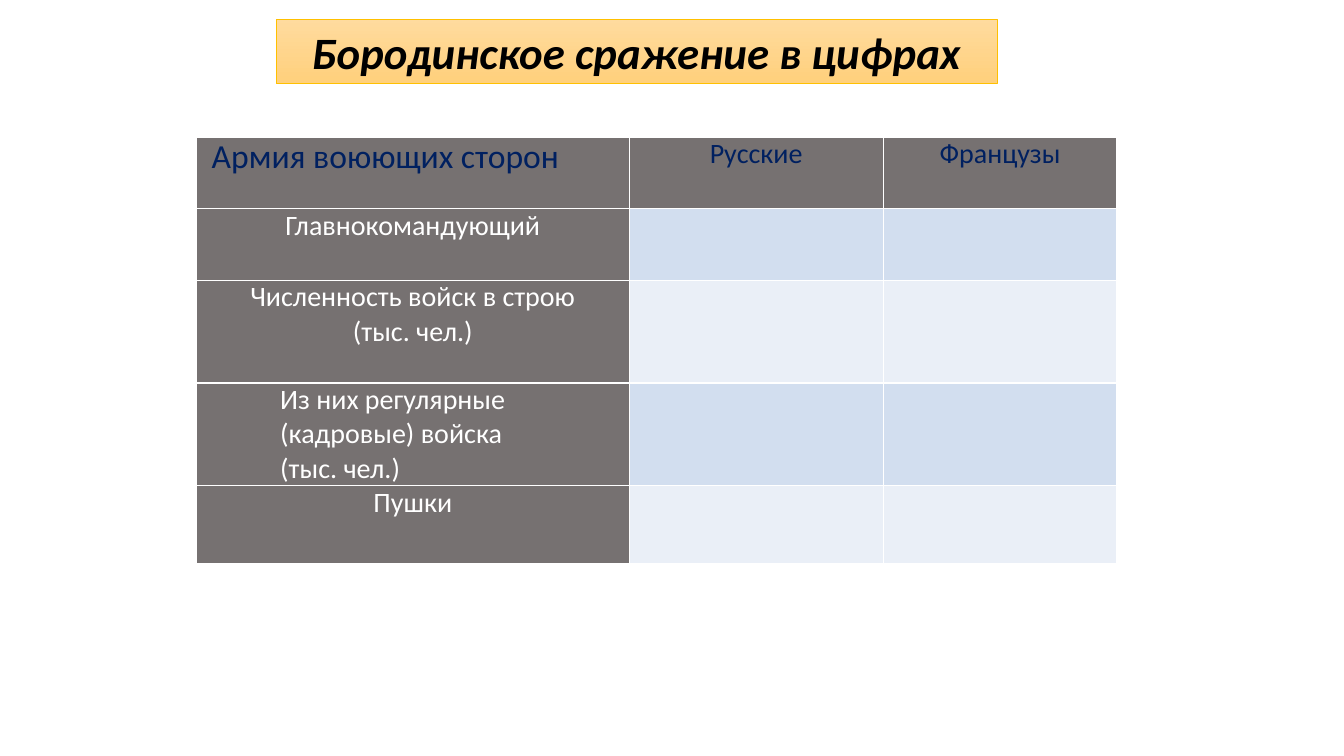
"""Builds the slide with the Battle of Borodino table."""
from lxml.etree import SubElement
from pptx import Presentation
from pptx.dml.color import RGBColor
from pptx.enum.shapes import MSO_SHAPE
from pptx.enum.text import MSO_ANCHOR, PP_ALIGN
from pptx.oxml import parse_xml
from pptx.oxml.ns import nsdecls, qn
from pptx.util import Inches, Pt

WHITE = RGBColor(255, 255, 255)
BLACK = RGBColor(0, 0, 0)
NAVY = RGBColor(0x00, 0x20, 0x60)
GREY = RGBColor(0x76, 0x71, 0x71)
GOLD = RGBColor(0xFF, 0xC0, 0x00)
PEACH = RGBColor(0xFF, 0xDB, 0x9E)
AMBER = RGBColor(0xFF, 0xD0, 0x7C)
BANDS = RGBColor(0xD2, 0xDE, 0xEF), RGBColor(0xEA, 0xEF, 0xF7)

TITLE = "Бородинское сражение в цифрах"
HEADS = ["Армия воюющих сторон", "Русские", "Французы"]
LABELS = [
    ["Главнокомандующий"],
    ["Численность войск в строю", "(тыс. чел.)"],
    ["Из них регулярные", "(кадровые) войска", "(тыс. чел.)"],
    ["Пушки"],
]
COLS = [4.29, 2.52, 2.32]
ROWS = [0.71, 0.71, 1.02, 1, 0.77]
PAD = {"margin_left": 0.07, "margin_right": 0.07, "margin_top": 0, "margin_bottom": 0}


def style(para, size, color, bold=False, italic=False):
    form = {"name": "Calibri", "size": Pt(size), "bold": bold, "italic": italic}
    for key, value in form.items():
        setattr(para.font, key, value)
    para.font.color.rgb = color


def write(cell, lines, color, size=20, indent=None):
    for key, value in PAD.items():
        setattr(cell, key, Inches(value))
    frame = cell.text_frame
    frame.text = "\n".join(lines)
    for para in frame.paragraphs:
        para.alignment = PP_ALIGN.CENTER if indent is None else PP_ALIGN.LEFT
        if indent is not None:
            para._p.get_or_add_pPr().set("marL", str(Inches(indent)))
        style(para, size, color)


def paint(cell, color):
    cell.fill.solid()
    cell.fill.fore_color.rgb = color
    props = cell._tc.get_or_add_tcPr()
    for spot, side in enumerate("LRTB"):
        line = parse_xml(f'<a:ln{side} {nsdecls("a")} w="{Pt(1)}"/>')
        solid = SubElement(line, qn("a:solidFill"))
        SubElement(solid, qn("a:srgbClr"), val=str(WHITE))
        props.insert(spot, line)


def add_grid(slide):
    box = [Inches(n) for n in (1.95, 1.36, sum(COLS), sum(ROWS))]
    table = slide.shapes.add_table(len(ROWS), len(COLS), *box).table
    table.first_row = table.horz_banding = False
    for col, width in zip(table.columns, COLS):
        col.width = Inches(width)
    for row, height in zip(table.rows, ROWS):
        row.height = Inches(height)
    for r in range(len(ROWS)):
        for c in range(len(COLS)):
            paint(table.cell(r, c), GREY if r == 0 or c == 0 else BANDS[(r - 1) % 2])
    for c, head in enumerate(HEADS):
        form = {"size": 24, "indent": 0.08} if c == 0 else {}
        write(table.cell(0, c), [head], NAVY, **form)
    for r, lines in enumerate(LABELS, 1):
        write(table.cell(r, 0), lines, WHITE, indent=0.76 if len(lines) > 2 else None)


def add_title(slide):
    box = [Inches(n) for n in (2.74, 0.19, 7.15, 0.64)]
    shape = slide.shapes.add_shape(MSO_SHAPE.RECTANGLE, *box)
    shape.shadow.inherit = False
    shape.fill.gradient()
    shape.fill.gradient_angle = 270
    for stop, color in zip(shape.fill.gradient_stops, (PEACH, AMBER)):
        stop.color.rgb = color
    shape.line.color.rgb = GOLD
    shape.line.width = Pt(0.5)
    frame = shape.text_frame
    frame.text = TITLE
    frame.word_wrap = True
    frame.vertical_anchor = MSO_ANCHOR.MIDDLE
    para = frame.paragraphs[0]
    para.alignment = PP_ALIGN.CENTER
    style(para, 32, BLACK, bold=True, italic=True)


def main():
    deck = Presentation()
    deck.slide_width, deck.slide_height = Inches(13.33), Inches(7.5)
    slide = deck.slides.add_slide(deck.slide_layouts[6])
    add_grid(slide)
    add_title(slide)
    deck.save("out.pptx")


if __name__ == "__main__":
    main()
